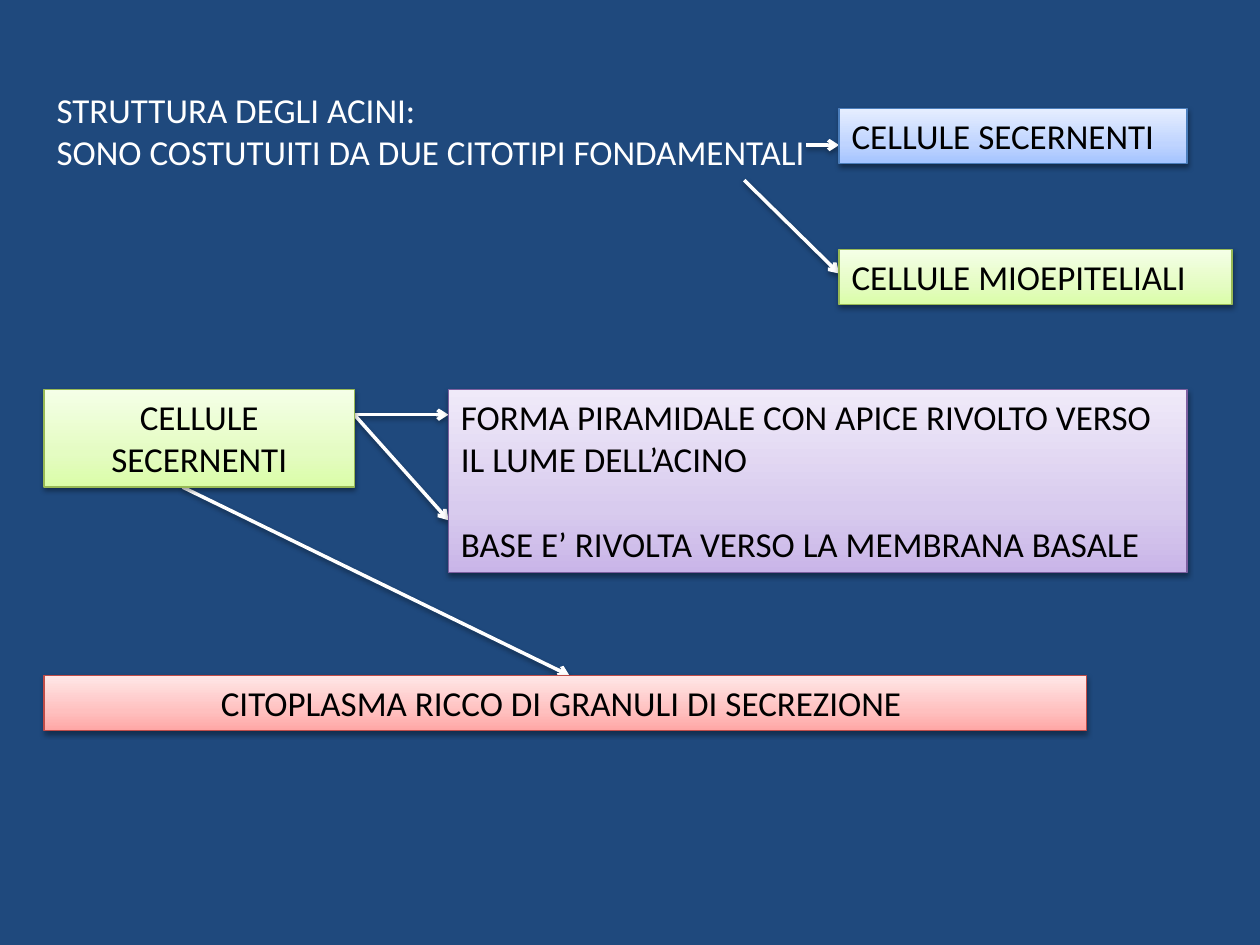
from copy import deepcopy

from lxml import etree
from pptx import Presentation
from pptx.dml.color import RGBColor
from pptx.enum import shapes, text
from pptx.oxml import parse_xml
from pptx.oxml.ns import nsdecls, qn
from pptx.util import Pt

THEME = {
    "font": "Calibri",
    "size": 20,
    "background": "1F497D",
    "light": "FFFFFF",
    "dark": "000000",
    # outline, then gradient from bottom to top
    "blue": ("4B7EBC", ["A4C4FF", "BFD4FF", "E6EEFF"]),
    "green": ("98B955", ["DAFDA7", "E4FCC2", "F5FFE7"]),
    "purple": ("7D60A0", ["C9B5E8", "D8CBEE", "F0EAF9"]),
    "red": ("BF4C48", ["FFA6A5", "FFC0BF", "FFE7E7"]),
}
GRADIENT_STOPS = [0, 0.35, 1]
SHADOW = (
    f'<a:effectLst {nsdecls("a")}>'
    f'<a:outerShdw blurRad="{Pt(3.1)}" dist="{Pt(1.6)}" dir="5400000" rotWithShape="0">'
    f'<a:srgbClr val="{THEME["dark"]}"><a:alpha val="38000"/></a:srgbClr>'
    "</a:outerShdw></a:effectLst>"
)

LEFT = 25.2
CITOTYPE_LEFT = 479.5
FEATURES_LEFT = 256.3
FEATURES_RIGHT = 678.3
SECRETORY_RIGHT = 202.5
ROW_TOP = 222.7
ARROW_ROW = 237
GRANULES_TOP = 386
ONE_LINE, TWO_LINES, FOUR_LINES = 31.5, 55.7, 104.7
LINE_GAP = 24.4


def write(box, paragraphs, color, align=text.PP_ALIGN.LEFT, gap=0):
    """Fill a box with paragraphs, set apart by gap points."""
    frame = box.text_frame
    frame.word_wrap = True
    frame.auto_size = text.MSO_AUTO_SIZE.SHAPE_TO_FIT_TEXT
    frame.vertical_anchor = text.MSO_ANCHOR.TOP
    for index, wording in enumerate(paragraphs):
        paragraph = frame.add_paragraph() if index else frame.paragraphs[0]
        paragraph.alignment = align
        if index and gap:
            paragraph.space_before = Pt(gap)
        run = paragraph.add_run()
        run.text = wording
        run.font.name = THEME["font"]
        run.font.size = Pt(THEME["size"])
        run.font.color.rgb = RGBColor.from_string(color)


prs = Presentation()
prs.slide_width, prs.slide_height = Pt(720), Pt(540)
slide = prs.slides.add_slide(prs.slide_layouts[6])
slide.background.fill.solid()
slide.background.fill.fore_color.rgb = RGBColor.from_string(THEME["background"])

heading = slide.shapes.add_textbox(Pt(LEFT), Pt(46.8), Pt(625), Pt(TWO_LINES))
write(
    heading,
    ["STRUTTURA DEGLI ACINI:", "SONO COSTUTUITI DA DUE CITOTIPI FONDAMENTALI"],
    THEME["light"],
)

# Arrows: start x, start y, end x, end y
arrows = [
    (460.8, 82.9, CITOTYPE_LEFT, 82.9),
    (425.3, 103, CITOTYPE_LEFT, 156.3),
    (SECRETORY_RIGHT, ARROW_ROW, FEATURES_LEFT, ARROW_ROW),
    (SECRETORY_RIGHT, ARROW_ROW, FEATURES_LEFT, 297.3),
    (104.4, ROW_TOP + TWO_LINES, 325.4, GRANULES_TOP),
]
for ends in arrows:
    arrow = slide.shapes.add_connector(
        shapes.MSO_CONNECTOR.STRAIGHT, *[Pt(value) for value in ends]
    )
    arrow.line.color.rgb = RGBColor.from_string(THEME["light"])
    arrow.line.width = Pt(2)
    etree.SubElement(arrow.line._get_or_add_ln(), qn("a:tailEnd"), type="arrow")
    arrow._element.spPr.append(parse_xml(SHADOW))

# Boxes: left, top, width, height, palette, alignment, paragraphs
start, center = text.PP_ALIGN.LEFT, text.PP_ALIGN.CENTER
boxes = [
    (CITOTYPE_LEFT, 61.9, FEATURES_RIGHT - CITOTYPE_LEFT, ONE_LINE, "blue", start,
     ["CELLULE SECERNENTI"]),
    (CITOTYPE_LEFT, 142.6, 224.6, ONE_LINE, "green", start,
     ["CELLULE MIOEPITELIALI"]),
    (LEFT, ROW_TOP, SECRETORY_RIGHT - LEFT, TWO_LINES, "green", center,
     ["CELLULE SECERNENTI"]),
    (FEATURES_LEFT, ROW_TOP, FEATURES_RIGHT - FEATURES_LEFT, FOUR_LINES, "purple", start,
     ["FORMA PIRAMIDALE CON APICE RIVOLTO VERSO IL LUME DELL’ACINO",
      "BASE E’ RIVOLTA VERSO LA MEMBRANA BASALE"]),
    (LEFT, GRANULES_TOP, 595.6, ONE_LINE, "red", center,
     ["CITOPLASMA RICCO DI GRANULI DI SECREZIONE "]),
]
for left, top, width, height, palette, align, paragraphs in boxes:
    box = slide.shapes.add_shape(
        shapes.MSO_SHAPE.RECTANGLE, Pt(left), Pt(top), Pt(width), Pt(height)
    )
    outline, gradient = THEME[palette]
    box.fill.gradient()
    box.fill.gradient_angle = 90
    stop_list = box._element.spPr.find(qn("a:gradFill")).find(qn("a:gsLst"))
    stop_list.append(deepcopy(stop_list[0]))
    for stop, position, color in zip(box.fill.gradient_stops, GRADIENT_STOPS, gradient):
        stop.position = position
        stop.color.rgb = RGBColor.from_string(color)
    box.line.color.rgb = RGBColor.from_string(outline)
    box.line.width = Pt(0.75)
    box._element.spPr.append(parse_xml(SHADOW))
    write(box, paragraphs, THEME["dark"], align, LINE_GAP)

prs.save("out.pptx")
